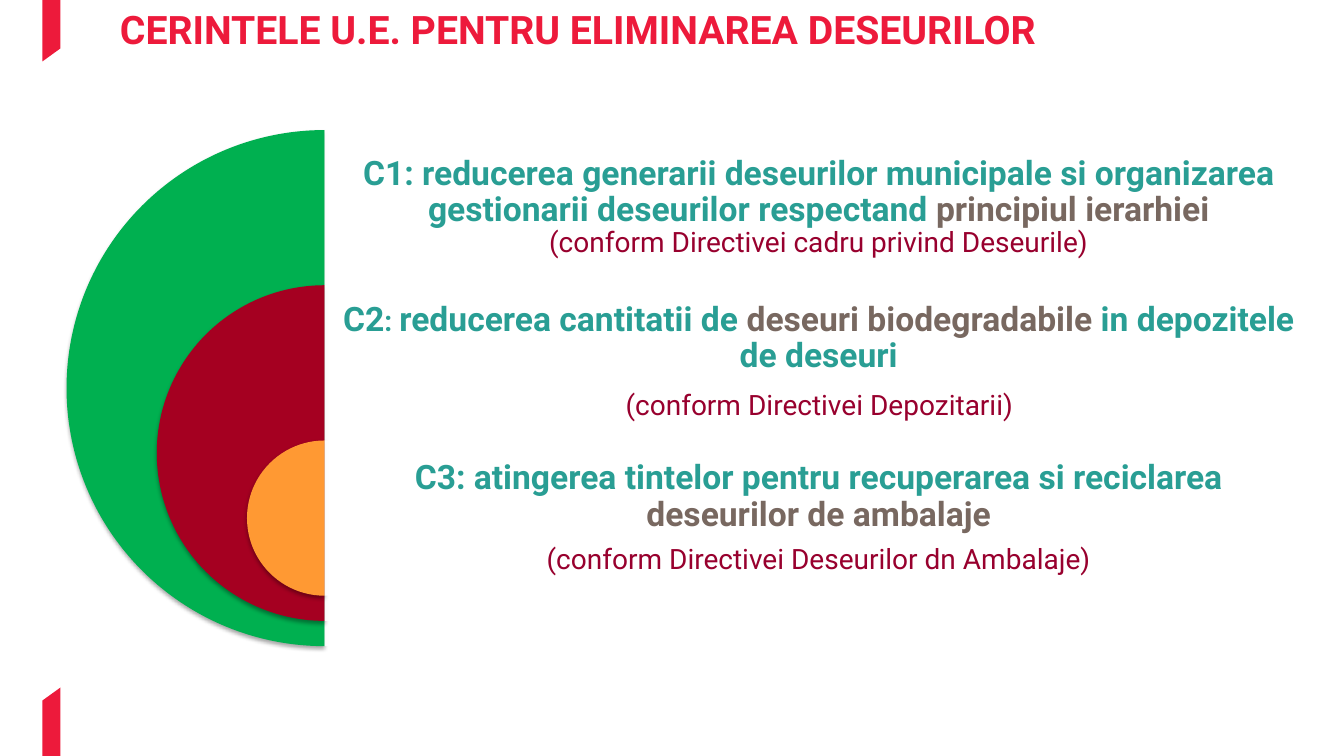
from lxml import etree
from pptx import Presentation
from pptx import util as u
from pptx.dml.color import RGBColor
from pptx.enum import shapes, text
from pptx.oxml.ns import qn

RED = RGBColor(0xED, 0x1A, 0x3B)
GREEN = RGBColor(0x00, 0xB0, 0x50)
CRIMSON = RGBColor(0xA5, 0x00, 0x21)
ORANGE = RGBColor(0xFF, 0x99, 0x33)
TEAL = RGBColor(0x29, 0x9E, 0x94)
TAUPE = RGBColor(0x78, 0x68, 0x60)
WINE = RGBColor(0x98, 0x00, 0x2E)
WHITE = RGBColor(0xFF, 0xFF, 0xFF)
FONT = "Roboto"
WIDTH, HEIGHT = 13.33, 7.5

# Run styles: colour, size, bold
MAIN = (TEAL, 24, True)
SMALL = (TEAL, 20, True)
KEY = (TAUPE, 24, True)
SPACER = (WINE, 24, True)
SOURCE = (WINE, 20, False)
BREAK = "\n"

# Pie colour and paragraphs of each requirement
REQUIREMENTS = [
    (GREEN, [[
        ("C1: reducerea generarii deseurilor municipale si organizarea "
         "gestionarii deseurilor respectand ", MAIN),
        ("principiul ierarhiei", KEY),
        (BREAK, KEY),
        ("(conform Directivei cadru privind Deseurile)", SOURCE)]]),
    (CRIMSON, [
        [("C2", MAIN), (": ", SMALL), ("reducerea cantitatii de ", MAIN),
         ("deseuri biodegradabile ", KEY), ("in depozitele de deseuri", MAIN)],
        [(" ", SPACER), ("(conform Directivei Depozitarii) ", SOURCE)]]),
    (ORANGE, [
        [("C3: atingerea tintelor pentru recuperarea si reciclarea ", MAIN),
         ("deseurilor de ambalaje", KEY)],
        [("(conform Directivei Deseurilor dn Ambalaje)", SOURCE)]]),
]


def inches(*lengths):
    return [u.Inches(length) for length in lengths]


def paint(shape, color):
    shape.shadow.inherit = False
    shape.fill.solid()
    shape.fill.fore_color.rgb = color
    shape.line.fill.background()


def add_soft_shadow(shape):
    effects = shape._element.spPr.find(qn("a:effectLst"))
    shadow = etree.SubElement(effects, qn("a:outerShdw"), blurRad=str(u.Pt(3.1)),
                              dist=str(u.Pt(1.8)), dir="5400000", rotWithShape="0")
    black = etree.SubElement(shadow, qn("a:srgbClr"), val="000000")
    etree.SubElement(black, qn("a:alpha"), val="35000")


def add_edge_ribbons(slide, left, width):
    """Slanted ribbons at the top and bottom edges of the slide."""
    right = left + width
    for edge, outer, inner in ((0, 0.61, 0.48), (HEIGHT, 6.95, 6.82)):
        outline = slide.shapes.build_freeform(*inches(left, edge), scale=1.0)
        outline.add_line_segments(
            [inches(right, edge), inches(right, inner), inches(left, outer)])
        paint(outline.convert_to_shape(), RED)


def add_title(slide, left, top, width, height):
    title = slide.shapes.title
    title.left, title.top, title.width, title.height = inches(left, top, width, height)
    frame = title.text_frame
    frame.text = "CERINTELE U.E. PENTRU ELIMINAREA DESEURILOR"
    frame.vertical_anchor = text.MSO_ANCHOR.TOP
    heading = frame.paragraphs[0]
    heading.alignment = text.PP_ALIGN.CENTER
    font = heading.font
    font.name, font.size, font.bold = FONT, u.Pt(28), True
    font.color.rgb = RED


def add_half_disc(slide, center, top, size, color):
    disc = slide.shapes.add_shape(
        shapes.MSO_SHAPE.PIE, *inches(center - size / 2, top, size, size))
    disc.adjustments[0], disc.adjustments[1] = 54, 162
    paint(disc, color)
    add_soft_shadow(disc)


def add_veil(slide, left, top, width, height):
    veil = slide.shapes.add_shape(
        shapes.MSO_SHAPE.RECTANGLE, *inches(left, top, width, height))
    paint(veil, WHITE)
    white = veil._element.spPr.find(qn("a:solidFill"))[0]
    etree.SubElement(white, qn("a:alpha"), val="90000")


def add_requirement_text(slide, left, top, width, height, paragraphs):
    frame = slide.shapes.add_textbox(*inches(left, top, width, height)).text_frame
    frame.word_wrap = True
    frame.vertical_anchor = text.MSO_ANCHOR.MIDDLE
    frame.margin_left = frame.margin_right = u.Inches(0.1)
    frame.margin_top = frame.margin_bottom = u.Inches(0.1)
    for index, pieces in enumerate(paragraphs):
        paragraph = frame.add_paragraph() if index else frame.paragraphs[0]
        paragraph.alignment = text.PP_ALIGN.CENTER
        paragraph.line_spacing = 0.9
        paragraph.space_after = u.Pt(8.4)
        paragraph.font.name = FONT
        for words, (color, size, bold) in pieces:
            if words == BREAK:
                paragraph.add_line_break()
                continue
            run = paragraph.add_run()
            run.text = words
            run.font.size, run.font.bold = u.Pt(size), bold
            run.font.color.rgb = color


def add_nested_targets(slide, center, top, width, row):
    """Nested half discs, one row lower each, with a text row beside each."""
    shrink = 1.79
    last = len(REQUIREMENTS) - 1
    for index, (color, paragraphs) in enumerate(REQUIREMENTS):
        size = row + (last - index) * shrink
        row_top = top + index * row
        add_half_disc(slide, center, row_top, size, color)
        add_veil(slide, center, row_top, width, size)
        add_requirement_text(slide, center, row_top, width, row, paragraphs)


def main():
    deck = Presentation()
    deck.slide_width, deck.slide_height = inches(WIDTH, HEIGHT)
    slide = deck.slides.add_slide(deck.slide_layouts[5])
    add_edge_ribbons(slide, 0.42, 0.18)
    add_nested_targets(slide, 3.22, 1.29, 9.8, 1.54)
    add_title(slide, 0.66, 0, 10.14, 0.83)
    deck.save("out.pptx")


if __name__ == "__main__":
    main()
